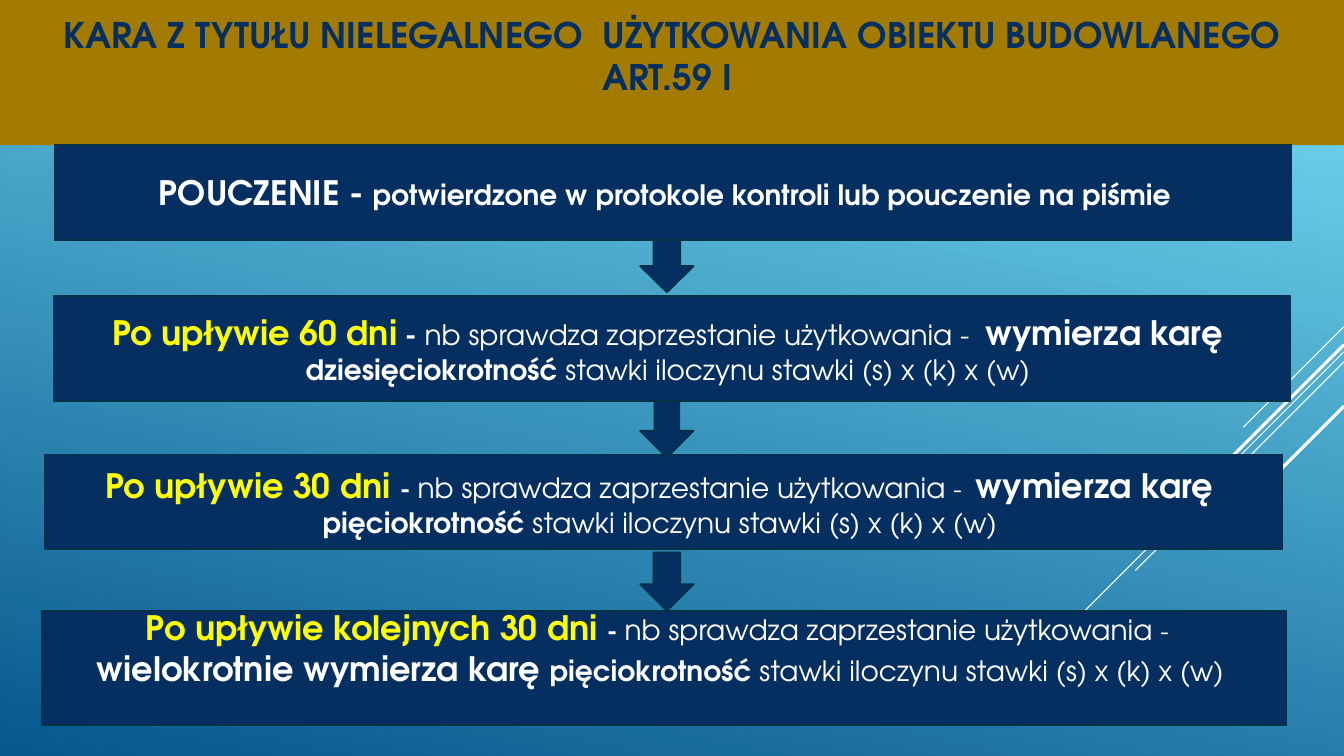
import pptx
import pptx.util
import pptx.dml.color
import pptx.enum.shapes
import pptx.enum.text
import pptx.oxml.ns
import lxml.etree

Inches = pptx.util.Inches
Pt = pptx.util.Pt
RGBColor = pptx.dml.color.RGBColor
Shape = pptx.enum.shapes.MSO_SHAPE
Anchor = pptx.enum.text.MSO_ANCHOR

NAVY = RGBColor(0x05, 0x2F, 0x61)
OUTLINE = RGBColor(0x04, 0x31, 0x48)
GOLD = RGBColor(0xA2, 0x7B, 0x00)
YELLOW = RGBColor(0xFF, 0xFF, 0x00)
WHITE = RGBColor(0xFF, 0xFF, 0xFF)
SKY = RGBColor(0x6E, 0xD2, 0xEB)
SEA = RGBColor(0x06, 0x58, 0x8E)
FONT = "TeX Gyre Adventor"


def add_text(para, text, size=20, color=WHITE, bold=True):
    para.alignment = pptx.enum.text.PP_ALIGN.CENTER
    span = para.add_run()
    span.text = text
    span.font.name = FONT
    span.font.size = Pt(size)
    span.font.bold = bold
    span.font.color.rgb = color


def add_navy_shape(kind, left, top, width, height):
    shape = page.shapes.add_shape(
        kind, Inches(left), Inches(top), Inches(width), Inches(height))
    shape.shadow.inherit = False
    shape.fill.solid()
    shape.fill.fore_color.rgb = NAVY
    shape.line.color.rgb = OUTLINE
    shape.line.width = Pt(1.25)
    return shape


deck = pptx.Presentation()
deck.slide_width = Inches(13.33)
deck.slide_height = Inches(7.5)
page = deck.slides.add_slide(deck.slide_layouts.get_by_name("Title Only"))

backdrop = page.background.fill
backdrop.gradient()
backdrop.gradient_angle = 258
for stop, position, color in zip(backdrop.gradient_stops, (0.1, 1), (SKY, SEA)):
    stop.position = position
    stop.color.rgb = color

# Diagonal rays run at 45 degrees from the right edge: start height, reach, weight
for top, reach, weight in [(3.24, 1, 0.75), (3.49, 3.26, 0.75), (3.59, 2.07, 0.75),
                           (3.42, 1.91, 2.25), (4.03, 1.39, 2.25)]:
    ray = page.shapes.add_connector(
        pptx.enum.shapes.MSO_CONNECTOR.STRAIGHT, Inches(13.33), Inches(top),
        Inches(13.33 - reach), Inches(top + reach))
    ray.line.color.rgb = WHITE
    ray.line.width = Pt(weight)
    lxml.etree.SubElement(ray.element.spPr, pptx.oxml.ns.qn("a:effectLst"))

title = page.shapes.title
title.left, title.top = Inches(0), Inches(0)
title.width, title.height = Inches(13.33), Inches(1.44)
title.fill.solid()
title.fill.fore_color.rgb = GOLD
frame = title.text_frame
frame.auto_size = pptx.enum.text.MSO_AUTO_SIZE.NONE
frame.vertical_anchor = Anchor.BOTTOM
frame.margin_bottom = Inches(0.47)
heading = frame.paragraphs[0]
add_text(heading, "KARA Z TYTUŁU NIELEGALNEGO  UŻYTKOWANIA OBIEKTU BUDOWLANEGO",
         size=25.2, color=NAVY)
heading.add_line_break()
add_text(heading, "ART.59 I ", size=25.2, color=NAVY)

PLAIN = {"bold": False}
LARGE = {"size": 24}
DEADLINE = {"size": 24, "color": YELLOW}
DASH = {"size": 18}
THIN_DASH = {"size": 18, "bold": False}
RATE = (" stawki iloczynu stawki (s) x (k) x (w) ", PLAIN)
CHECK = ("nb sprawdza zaprzestanie użytkowania ", PLAIN)

# Each step: left, top, width, height and its lines of formatted text
steps = [
    (0.54, 1.44, 12.27, 0.94, [
        [("POUCZENIE - ", LARGE),
         ("potwierdzone w protokole kontroli lub pouczenie na piśmie  ", {})]]),
    (0.53, 2.94, 12.27, 1.04, [
        [("Po upływie 60 dni", DEADLINE), (" - ", {}), CHECK, ("-  ", PLAIN),
         ("wymierza karę ", LARGE)],
        [("dziesięciokrotność", {}), RATE]]),
    (0.45, 4.51, 12.27, 0.94, [
        [("Po upływie 30 dni ", DEADLINE), ("- ", DASH), CHECK, ("-  ", THIN_DASH),
         ("wymierza karę ", LARGE)],
        [("pięciokrotność", {}), RATE]]),
    (0.42, 6.06, 12.34, 1.13, [
        [("Po upływie kolejnych 30 dni ", DEADLINE), ("- ", DASH), CHECK,
         ("-  ", THIN_DASH)],
        [("wielokrotnie wymierza karę ", LARGE), ("pięciokrotność", {}), RATE]]),
]
for left, top, width, height, lines in steps:
    box = add_navy_shape(Shape.RECTANGLE, left, top, width, height)
    frame = box.text_frame
    frame.word_wrap = True
    frame.vertical_anchor = Anchor.MIDDLE
    for number, line in enumerate(lines):
        para = frame.add_paragraph() if number else frame.paragraphs[0]
        for text, style in line:
            add_text(para, text, **style)

# The text of the last step sits high in its box
frame.margin_top = Inches(0)
frame.margin_bottom = Inches(0.4)

for top, height, shaft in [(2.38, 0.52, 0.5), (3.98, 0.56, 0.46), (5.48, 0.58, 0.5)]:
    arrow = add_navy_shape(Shape.DOWN_ARROW, 6.35, top, 0.53, height)
    arrow.adjustments[0] = shaft

deck.save("out.pptx")
